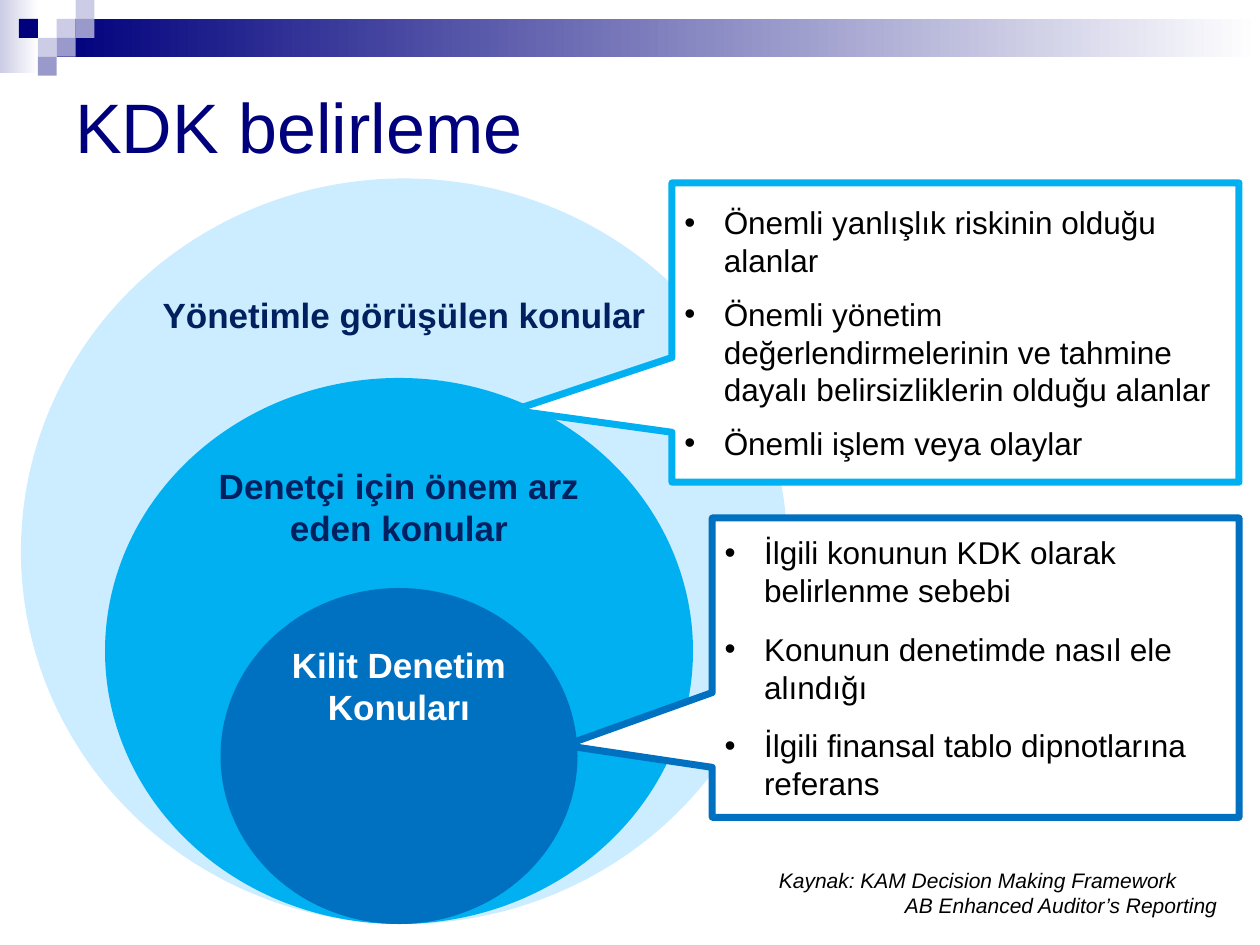
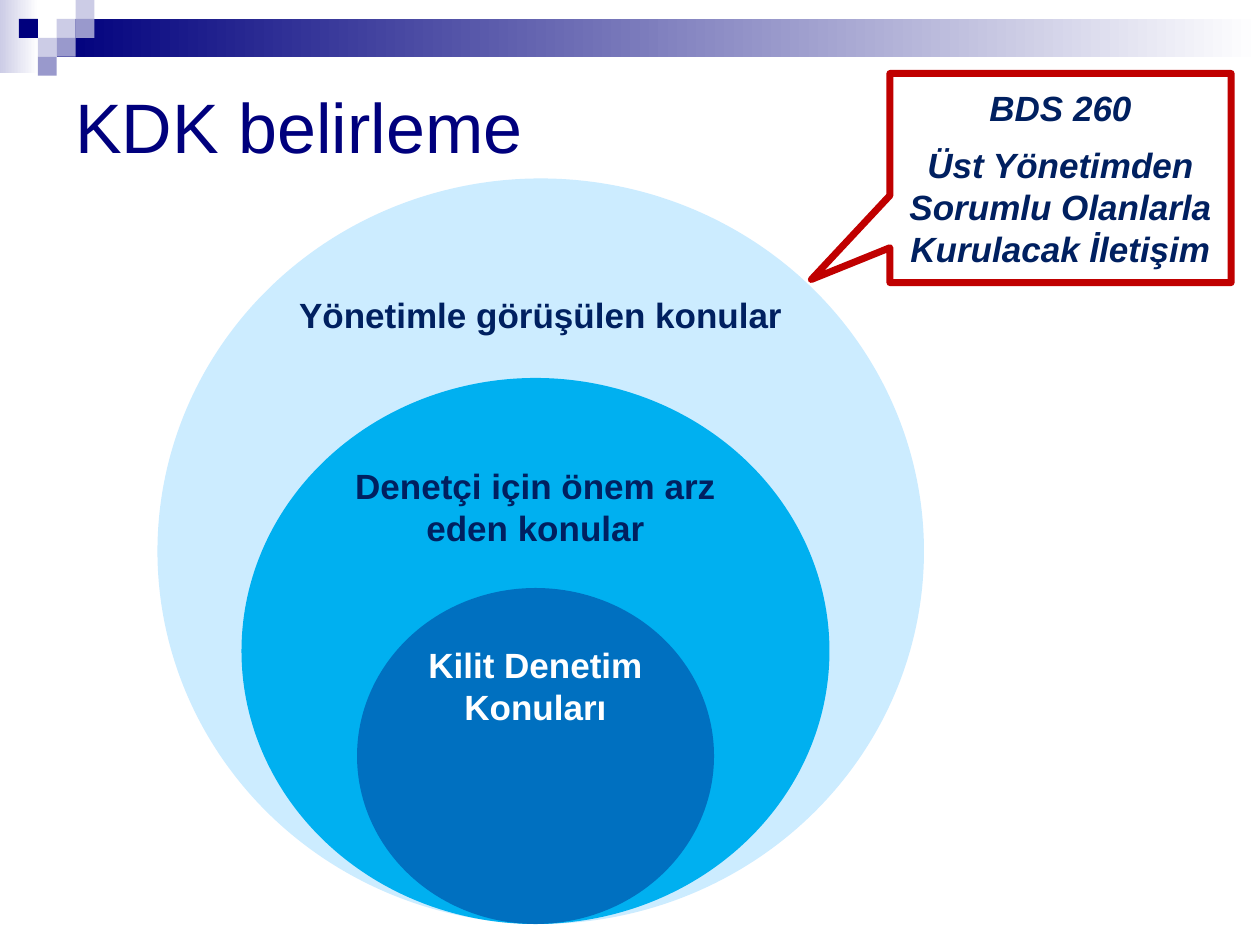
from dataclasses import dataclass

from pptx import Presentation
from pptx.dml.color import RGBColor
from pptx.enum.shapes import MSO_SHAPE
from pptx.enum.text import MSO_ANCHOR, PP_ALIGN
from pptx.oxml import parse_xml
from pptx.oxml.ns import nsdecls
from pptx.util import Pt

RECT, CIRCLE = MSO_SHAPE.RECTANGLE, MSO_SHAPE.FLOWCHART_CONNECTOR
CALLOUT = MSO_SHAPE.RECTANGULAR_CALLOUT
TOP, MIDDLE = MSO_ANCHOR.TOP, MSO_ANCHOR.MIDDLE
LEFT, CENTER = PP_ALIGN.LEFT, PP_ALIGN.CENTER


@dataclass(frozen=True)
class Theme:
    font: str = "Arial"
    navy: str = "00007D"
    lilac: str = "9999CC"
    pale_lilac: str = "CCCCE6"
    pale_blue: str = "CCECFF"
    sky: str = "00B0F0"
    blue: str = "0070C0"
    ink: str = "002060"
    red: str = "C00000"
    black: str = "000000"
    white: str = "FFFFFF"
    title: int = 40
    label: int = 20
    body: int = 18
    source: int = 12
    outline: int = 4


THEME = Theme()


def add_block(slide, kind, box, fill, line=None):
    """Add a preset shape; a pair of colours gives a left-to-right gradient."""
    block = slide.shapes.add_shape(kind, *map(Pt, box))
    block.shadow.inherit = False
    if isinstance(fill, tuple):
        block.fill.gradient()
        block.fill.gradient_angle = 0
        for stop, color in zip(block.fill.gradient_stops, fill):
            stop.color.rgb = RGBColor.from_string(color)
    else:
        block.fill.solid()
        block.fill.fore_color.rgb = RGBColor.from_string(fill)
    if line:
        block.line.color.rgb = RGBColor.from_string(line)
        block.line.width = Pt(THEME.outline)
    else:
        block.line.fill.background()
    return block


def write(holder, lines, size, color, anchor=TOP, align=LEFT, bold=False,
          italic=False, before=0, after=0, bullet=False):
    frame = holder.text_frame
    frame.word_wrap = True
    frame.vertical_anchor = anchor
    for i, line in enumerate(lines):
        paragraph = frame.paragraphs[0] if i == 0 else frame.add_paragraph()
        paragraph.alignment = align
        paragraph.space_before, paragraph.space_after = Pt(before), Pt(after)
        if bullet:
            props = paragraph._p.get_or_add_pPr()
            props.set("marL", str(Pt(22.5)))
            props.set("indent", str(-Pt(22.5)))
            props.append(parse_xml(f'<a:buFont {nsdecls("a")} typeface="Arial"/>'))
            props.append(parse_xml(f'<a:buChar {nsdecls("a")} char="•"/>'))
        run = paragraph.add_run()
        run.text = line
        run.font.name, run.font.size = THEME.font, Pt(size)
        run.font.bold, run.font.italic = bold, italic
        run.font.color.rgb = RGBColor.from_string(color)


# Shared header: gradient bands and a grid of small squares
UNIT = 10.8
BANDS = [
    ((0, 0, 22, 42), (THEME.pale_lilac, THEME.white)),
    ((3 * UNIT + 10.8, UNIT, 720 - 4 * UNIT, 2 * UNIT), (THEME.navy, THEME.white)),
]
SQUARES = [  # column, row, colour
    (3, 1, THEME.pale_lilac), (4, 0, THEME.pale_lilac), (4, 1, THEME.lilac),
    (2, 2, THEME.pale_lilac), (1, 1, THEME.navy), (3, 2, THEME.lilac),
    (2, 3, THEME.lilac),
]
BANDS[1] = ((3 * UNIT, UNIT, 720 - 3 * UNIT, 2 * UNIT), BANDS[1][1])

# Nested topics: offset from the outer circle, top, width, fill, text colour
TOPICS_BOTTOM = 528
TOPICS = [
    ("Yönetimle görüşülen konular", 0, 102, 438, THEME.pale_blue, THEME.ink),
    ("Denetçi için önem arz eden konular", 48, 216, 336, THEME.sky, THEME.ink),
    ("Kilit Denetim Konuları", 114, 336, 204, THEME.blue, THEME.white),
]

# Callouts of each slide: box, pointer, outline, lines, text style
detail = dict(size=THEME.body, color=THEME.black, bullet=True)
standard = dict(size=THEME.label, color=THEME.ink, align=CENTER,
                bold=True, italic=True, before=6, after=3)
AUDITOR_TOPICS = (
    (384, 104.5, 324, 171), (-0.78, 0.26), THEME.sky,
    ["Önemli yanlışlık riskinin olduğu alanlar",
     "Önemli yönetim değerlendirmelerinin ve tahmine dayalı belirsizliklerin "
     "olduğu alanlar",
     "Önemli işlem veya olaylar"],
    dict(detail, before=6, after=3))
KEY_TOPICS = (
    (407, 296, 301, 171), (-0.78, 0.26), THEME.blue,
    ["İlgili konunun KDK olarak belirlenme sebebi",
     "Konunun denetimde nasıl ele alındığı",
     "İlgili finansal tablo dipnotlarına referans"],
    dict(detail, after=12))
STANDARD = (
    (508.5, 42, 195, 119.5), (-0.73, 0.485), THEME.red,
    ["BDS 260", "Üst Yönetimden Sorumlu Olanlarla Kurulacak İletişim"],
    standard)
SLIDES = [(12, [AUDITOR_TOPICS, KEY_TOPICS]), (90, [STANDARD])]

deck = Presentation()
deck.slide_width, deck.slide_height = Pt(720), Pt(540)

for topics_left, callouts in SLIDES:
    slide = deck.slides.add_slide(deck.slide_layouts[6])

    # Header and title
    for box, colors in BANDS:
        add_block(slide, RECT, box, colors)
    for column, row, color in SQUARES:
        add_block(slide, RECT, (column * UNIT, row * UNIT, UNIT, UNIT), color)
    title = slide.shapes.add_textbox(Pt(36), Pt(36), Pt(648), Pt(72))
    write(title, ["KDK belirleme"], THEME.title, THEME.navy, anchor=MIDDLE)

    # Nested circles resting on one bottom line
    for topic, offset, top, width, fill, color in TOPICS:
        circle = add_block(slide, CIRCLE, (topics_left + offset, top, width,
                                           TOPICS_BOTTOM - top), fill)
        write(circle, [topic], THEME.label, color, align=CENTER, bold=True)

    # Callouts
    for box, pointer, outline, lines, style in callouts:
        callout = add_block(slide, CALLOUT, box, THEME.white, outline)
        callout.adjustments[0], callout.adjustments[1] = pointer
        write(callout, lines, anchor=MIDDLE, **style)

# Source note on the first slide, second line indented
source = deck.slides[0].shapes.add_textbox(Pt(438), Pt(492), Pt(270), Pt(36))
write(source, ["Kaynak: KAM Decision Making Framework",
               "AB Enhanced Auditor’s Reporting"],
      THEME.source, THEME.black, italic=True)
source.text_frame.paragraphs[1]._p.get_or_add_pPr().set("marL", str(Pt(72)))

deck.save("out.pptx")
